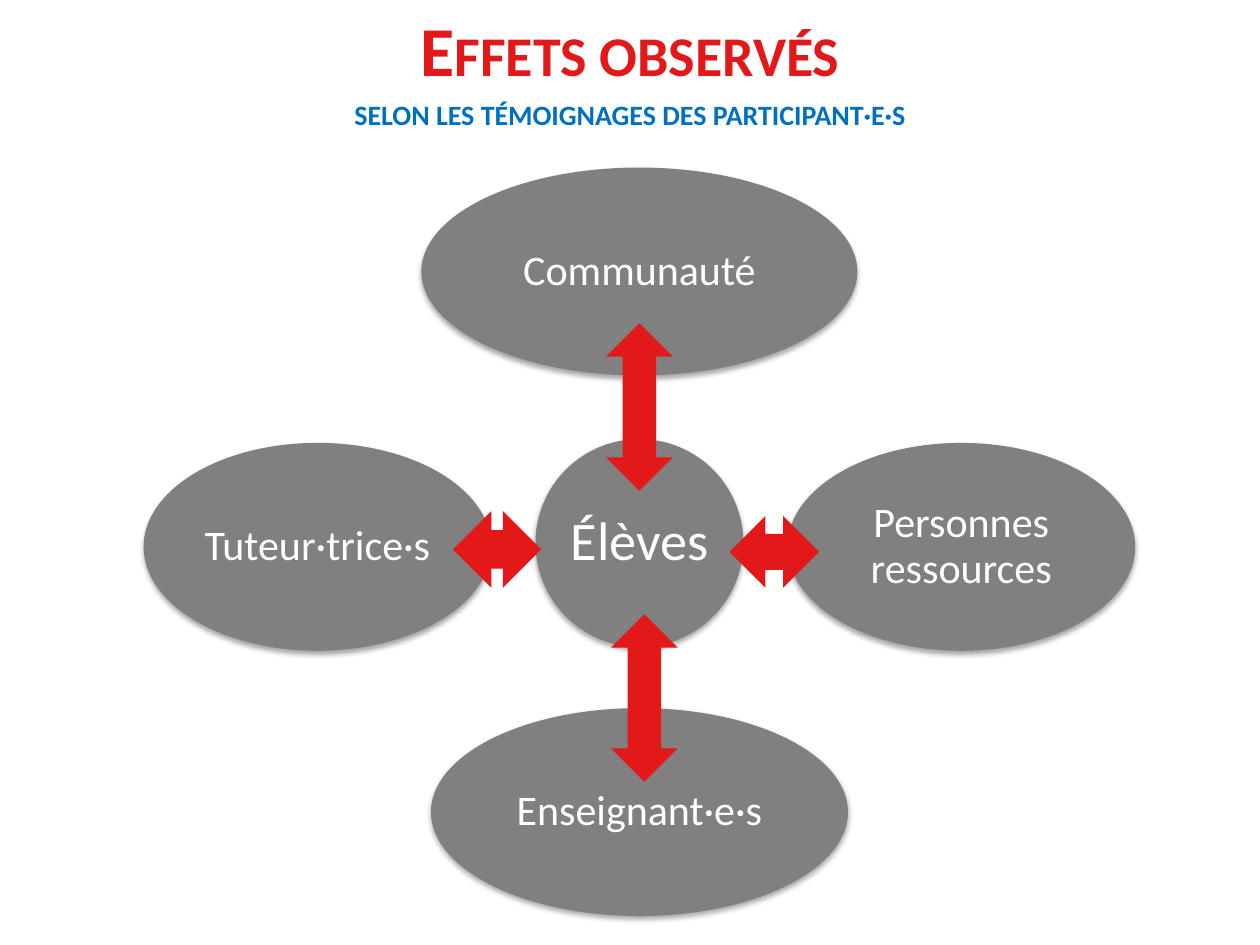
from dataclasses import dataclass

import lxml.etree
import pptx
import pptx.dml.color
import pptx.enum.shapes
import pptx.enum.text
import pptx.oxml
import pptx.oxml.ns
import pptx.util

Inches = pptx.util.Inches
Shape = pptx.enum.shapes.MSO_SHAPE
Align = pptx.enum.text.PP_ALIGN
Anchor = pptx.enum.text.MSO_ANCHOR


@dataclass(frozen=True)
class Theme:
    """Colours, font and type sizes of the slide."""
    red: str = "E31818"
    blue: str = "0070C0"
    grey: str = "808080"
    white: str = "FFFFFF"
    shadow: str = "000000"
    font: str = "Calibri"
    title: int = 40
    subtitle: int = 20
    hub: int = 31
    group: int = 24


THEME = Theme()


def rgb(value):
    """Turn a hex string into a colour."""
    return pptx.dml.color.RGBColor.from_string(value)


def set_all(obj, values):
    """Set attributes from a dict of format values."""
    for name, value in values.items():
        setattr(obj, name, value)


def add_run(p, text, size, color, bold=False):
    """Add a formatted run to a paragraph."""
    r = p.add_run()
    r.text = text
    set_all(r.font, {"name": THEME.font, "size": pptx.util.Pt(size), "bold": bold})
    r.font.color.rgb = rgb(color)
    return r


def add_filled(s, kind, box, color):
    """Add a preset shape with a plain fill and no line or shadow."""
    sp = s.shapes.add_shape(kind, *map(Inches, box))
    sp.shadow.inherit = False
    sp.fill.solid()
    sp.fill.fore_color.rgb = rgb(color)
    sp.line.fill.background()
    return sp


def add_soft_shadow(sp):
    """Give a shape a soft shadow that falls straight down."""
    effects = sp._element.spPr.find(pptx.oxml.ns.qn("a:effectLst"))
    effects.append(pptx.oxml.parse_xml(
        f'<a:outerShdw {pptx.oxml.ns.nsdecls("a")} blurRad="40000" dist="23000" '
        f'dir="5400000" rotWithShape="0"><a:srgbClr val="{THEME.shadow}">'
        '<a:alpha val="35000"/></a:srgbClr></a:outerShdw>'))


def add_title(s, box, title, subtitle):
    """Place the two-line small-caps title in its placeholder."""
    sp = s.shapes.title
    set_all(sp, dict(zip(("left", "top", "width", "height"), map(Inches, box))))
    tf = sp.text_frame
    set_all(tf, {"word_wrap": True, "vertical_anchor": Anchor.MIDDLE,
                 "auto_size": pptx.enum.text.MSO_AUTO_SIZE.NONE})
    p = tf.paragraphs[0]
    p.alignment = Align.CENTER
    first = add_run(p, title, THEME.title, THEME.red, True)
    p.add_line_break()
    br = p._p.find(pptx.oxml.ns.qn("a:br"))
    lxml.etree.SubElement(br, pptx.oxml.ns.qn("a:rPr"), sz=str(THEME.title * 100))
    second = add_run(p, subtitle, THEME.subtitle, THEME.blue, True)
    for r in (first, second):
        r._r.get_or_add_rPr().set("cap", "small")


def add_bubble(s, box, text, size):
    """Place a grey ellipse with a centred label."""
    sp = add_filled(s, Shape.OVAL, box, THEME.grey)
    add_soft_shadow(sp)
    tf = sp.text_frame
    margins = ("margin_left", "margin_top", "margin_right", "margin_bottom")
    set_all(tf, dict.fromkeys(margins, Inches(0.02)))
    set_all(tf, {"word_wrap": True, "vertical_anchor": Anchor.MIDDLE})
    p = tf.paragraphs[0]
    set_all(p, {"alignment": Align.CENTER, "line_spacing": 0.9})
    add_run(p, text, size, THEME.white)


def add_diagram(s, box):
    """Place the hub, the four groups around it and the double arrows."""
    left, top, width, height = box
    cx, cy, d = left + width / 2, top + height / 2, 1.65
    side, side_y = 2.76, cy + 0.04
    add_bubble(s, (cx - d / 2, cy - d / 2 + 0.01, d, d), "Élèves", THEME.hub)
    groups = (
        ("Communauté", cx, top + d / 2, 3.46),
        ("Personnes ressources", left + width - side / 2, side_y, side),
        ("Enseignant·e·s", cx, top + height - d / 2, 3.31),
        ("Tuteur·trice·s", left + side / 2, side_y, side),
    )
    for text, x, y, w in groups:
        add_bubble(s, (x - w / 2, y - d / 2, w, d), text, THEME.group)
    arrows = (
        (cx, cy - 1.07, 0.53, 1.33, 0),
        (cx + 0.04, cy + 1.24, 0.53, 1.33, 0),
        (cx - 1.13, cy + 0.06, 0.61, 0.7, 90),
        (cx + 1.07, cy + 0.08, 0.57, 0.71, 90),
    )
    for x, y, w, h, angle in arrows:
        sp = add_filled(s, Shape.UP_DOWN_ARROW, (x - w / 2, y - h / 2, w, h), THEME.red)
        sp.rotation = angle


def main():
    """Build the slide and save it."""
    prs = pptx.Presentation()
    set_all(prs, {"slide_width": Inches(10), "slide_height": Inches(7.5)})
    s = prs.slides.add_slide(prs.slide_layouts[5])
    add_title(s, (0.5, 0, 9, 1.11), "Effets observés",
              "selon les témoignages des participant·e·s")
    add_diagram(s, (1.14, 1.33, 7.87, 5.94))
    prs.save("out.pptx")


if __name__ == "__main__":
    main()
